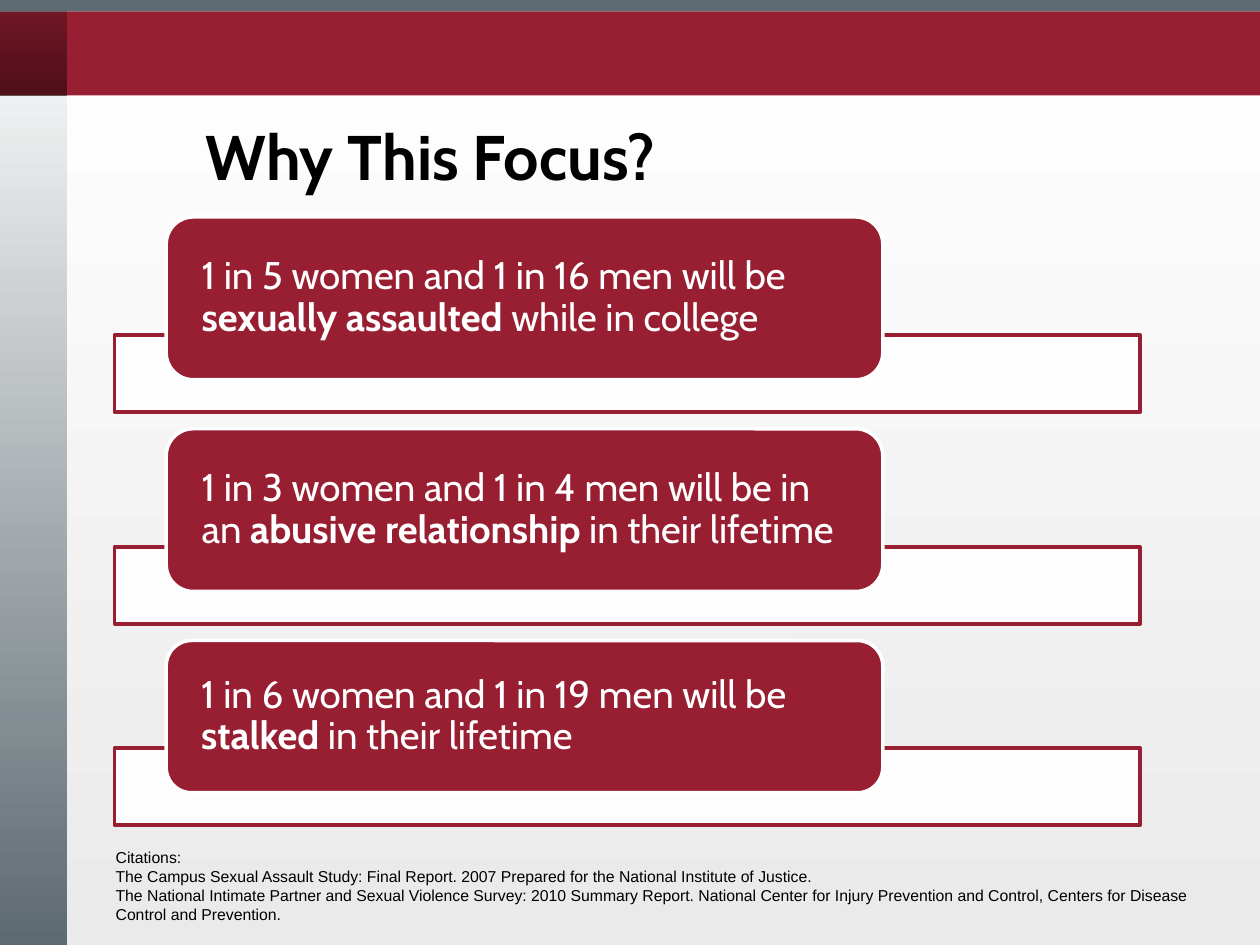
from lxml import etree
from pptx import Presentation
from pptx.dml.color import RGBColor
from pptx.enum.shapes import MSO_SHAPE
from pptx.enum.text import MSO_ANCHOR, PP_ALIGN
from pptx.oxml.ns import qn
from pptx.util import Pt

RECT, ROUND = MSO_SHAPE.RECTANGLE, MSO_SHAPE.ROUNDED_RECTANGLE
MIDDLE, BOTTOM, TOP = MSO_ANCHOR.MIDDLE, MSO_ANCHOR.BOTTOM, MSO_ANCHOR.TOP
LEFT = PP_ALIGN.LEFT

COLORS = {"crimson": "981E32", "slate": "5E6A71", "white": "FFFFFF",
          "black": "000000", "mist": "EAEAEA"}

CARD_TOP, CARD_PITCH, BAR_OVERLAP = 124, 121, 25.5
# Card height, then (text, bold) runs
FACTS = [
    (93, [("1 in 5 women and 1 in 16 men will be ", False),
          ("sexually assaulted ", True), ("while in college", False)]),
    (93, [("1 in 3 women and 1 in 4 men will be in an ", False),
          ("abusive relationship ", True), ("in their lifetime", False)]),
    (87, [("1 in 6 women and 1 in 19 men will be ", False),
          ("stalked ", True), ("in their lifetime", False)]),
]
CITATIONS = [
    "Citations:",
    "The Campus Sexual Assault Study: Final Report. 2007 Prepared for the "
    "National Institute of Justice.",
    "The National Intimate Partner and Sexual Violence Survey: 2010 Summary "
    "Report. National Center for Injury Prevention and Control, Centers for "
    "Disease Control and Prevention.",
]


def rgb(name):
    return RGBColor.from_string(COLORS[name])


def set_alpha(color_parent, percent):
    clr = color_parent.find(".//" + qn("a:srgbClr"))
    etree.SubElement(clr, qn("a:alpha"), val=str(percent * 1000))


def fill_gradient(fill, bottom, top):
    fill.gradient()
    fill.gradient_angle = 90
    for stop, name in zip(fill.gradient_stops, (bottom, top)):
        stop.color.rgb = rgb(name)


def add_box(slide, kind, box, fill, line=None):
    sp = slide.shapes.add_shape(kind, *map(Pt, box))
    sp.shadow.inherit = False
    sp.fill.solid()
    sp.fill.fore_color.rgb = rgb(fill)
    if line:
        sp.line.color.rgb = rgb(line)
        sp.line.width = Pt(2)
    else:
        sp.line.fill.background()
    return sp


def set_frame(tf, anchor, side, edge):
    tf.word_wrap = True
    tf.vertical_anchor = anchor
    tf.margin_left = tf.margin_right = Pt(side)
    tf.margin_top = tf.margin_bottom = Pt(edge)


def write_runs(p, runs, font, size, color, spacing=None):
    p.alignment = LEFT
    p.line_spacing = spacing
    for text, bold in runs:
        r = p.add_run()
        r.text = text
        r.font.name, r.font.size, r.font.bold = font, Pt(size), bold
        r.font.color.rgb = rgb(color)


def add_backdrop(slide):
    fill_gradient(slide.background.fill, "mist", "white")
    sidebar = add_box(slide, RECT, (0, 0, 38.2, 540), "slate")
    fill_gradient(sidebar.fill, "slate", "white")
    add_box(slide, RECT, (0, 6.5, 720, 48), "crimson")
    corner = add_box(slide, RECT, (-1.4, 6.5, 39.6, 48), "black")
    fill_gradient(corner.fill, "black", "black")
    stops = corner.fill.gradient_stops
    for gs, percent in zip(corner.element.spPr.iter(qn("a:gs")), (50, 25)):
        set_alpha(gs, percent)
    add_box(slide, RECT, (-1.4, 0, 721.4, 6.5), "slate")


def add_title(slide, text):
    tf = slide.shapes.add_textbox(Pt(81.4), Pt(62), Pt(604), Pt(52.6)).text_frame
    set_frame(tf, BOTTOM, 36, 3.6)
    write_runs(tf.paragraphs[0], [(text, True)], "Cabin", 36, "black", 0.9)


def add_fact(slide, top, height, runs):
    """Outlined bar with a rounded card overlapping its upper edge."""
    bar = add_box(slide, RECT, (65.5, top + height - BAR_OVERLAP, 586, 44),
                  "white", "crimson")
    set_alpha(bar.element.spPr.find(qn("a:solidFill")), 90)
    card = add_box(slide, ROUND, (95, top, 409.5, height), "crimson", "white")
    # The rounded corners inset the text by about 4 pt on their own
    set_frame(card.text_frame, MIDDLE, 15.7, 0)
    write_runs(card.text_frame.paragraphs[0], runs, "Cabin", 22, "white", 0.9)


def add_citations(slide, lines):
    tf = slide.shapes.add_textbox(Pt(59), Pt(481), Pt(649.5), Pt(59)).text_frame
    set_frame(tf, TOP, 7.2, 3.6)
    for i, line in enumerate(lines):
        p = tf.add_paragraph() if i else tf.paragraphs[0]
        write_runs(p, [(line, False)], "Arial", 9, "black")


def main():
    prs = Presentation()
    prs.slide_width, prs.slide_height = Pt(720), Pt(540)
    slide = prs.slides.add_slide(prs.slide_layouts[6])
    add_backdrop(slide)
    add_title(slide, "Why This Focus?")
    for i, (height, runs) in enumerate(FACTS):
        add_fact(slide, CARD_TOP + i * CARD_PITCH, height, runs)
    add_citations(slide, CITATIONS)
    prs.save("out.pptx")


if __name__ == "__main__":
    main()
